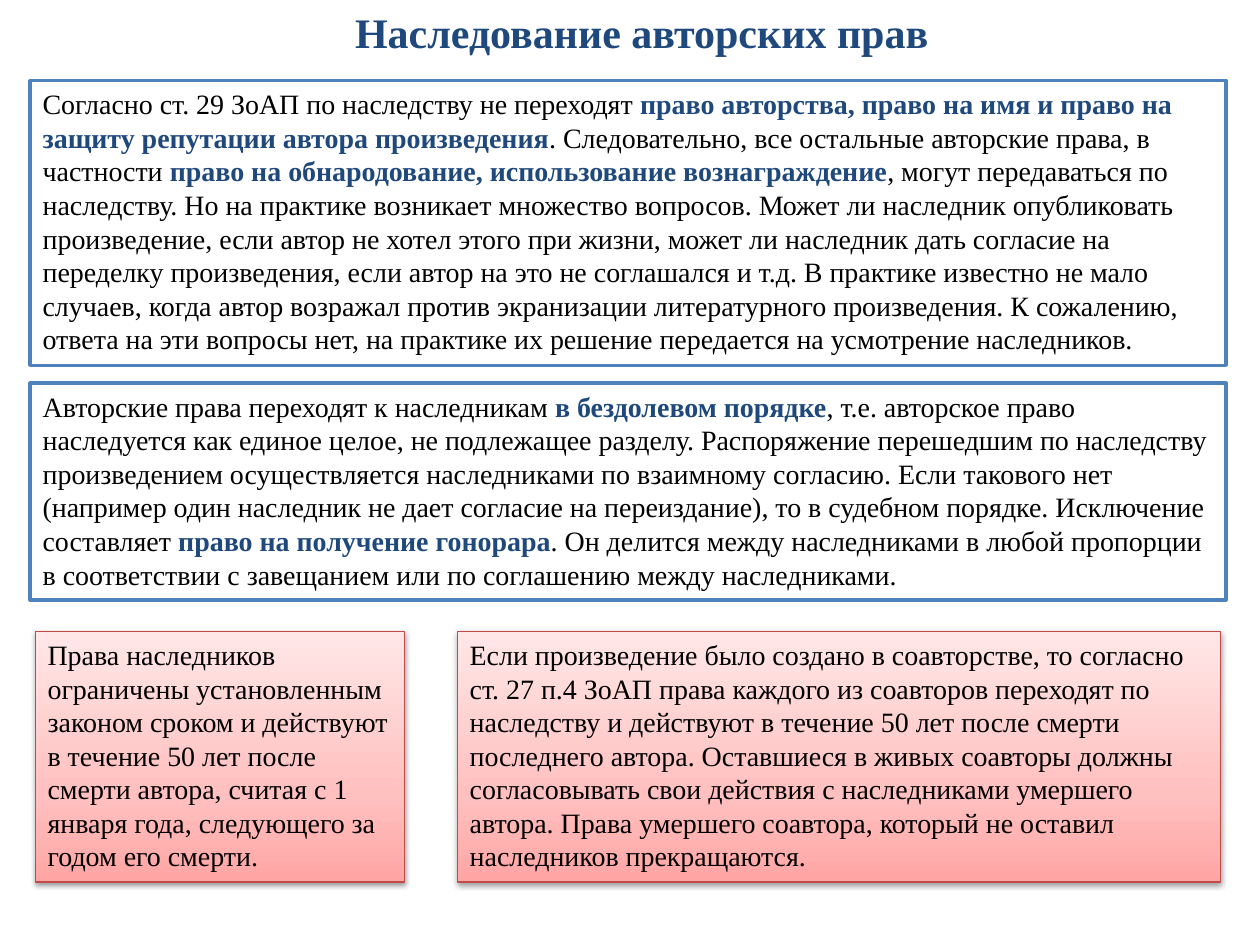
from dataclasses import dataclass

import pptx
import pptx.dml.color
import pptx.enum.shapes
import pptx.enum.text
import pptx.oxml
import pptx.oxml.ns
import pptx.util
from copy import deepcopy
from pptx.util import Inches

FONT = "Times New Roman"
BLACK, NAVY, BLUE, RED, WHITE = "000000", "1F497D", "4F81BD", "BF4C48", "FFFFFF"
PINK_STOPS = [(0, "FFA6A5"), (0.35, "FFC0BF"), (1, "FFE7E7")]


@dataclass
class Run:
    text: str
    key: bool = False


@dataclass
class Panel:
    left: float
    top: float
    width: float
    height: float
    runs: list[Run]
    pink: bool = False


PANELS = [
    Panel(0.24, 0.64, 9.49, 2.26, [
        Run("Согласно ст. 29 ЗоАП по наследству не переходят "),
        Run("право авторства, право на имя и право на защиту репутации автора "
            "произведения", True),
        Run(". Следовательно, все остальные авторские права, в частности "),
        Run("право на обнародование, использование вознаграждение", True),
        Run(", могут передаваться по наследству. Но на практике возникает множество "
            "вопросов. Может ли наследник опубликовать произведение, если автор не хотел "
            "этого при жизни, может ли наследник дать согласие на переделку произведения, "
            "если автор на это не соглашался и т.д. В практике известно не мало случаев, "
            "когда автор возражал против экранизации литературного произведения. "
            "К сожалению, ответа на эти вопросы нет, на практике их решение передается "
            "на усмотрение наследников."),
    ]),
    Panel(0.28, 5.01, 2.93, 1.99, [
        Run("Права наследников ограничены установленным законом сроком и действуют "
            "в течение 50 лет после смерти автора, считая с 1 января года, следующего "
            "за годом его смерти."),
    ], pink=True),
    Panel(0.24, 3.04, 9.49, 1.72, [
        Run("Авторские права переходят к наследникам "),
        Run("в бездолевом порядке", True),
        Run(", т.е. авторское право наследуется как единое целое, не подлежащее разделу. "
            "Распоряжение перешедшим по наследству произведением осуществляется "
            "наследниками по взаимному согласию. Если такового нет (например один "
            "наследник не дает согласие на переиздание), то в судебном порядке. "
            "Исключение составляет "),
        Run("право на получение гонорара", True),
        Run(". Он делится между наследниками в любой пропорции в соответствии "
            "с завещанием или по соглашению между наследниками."),
    ]),
    Panel(3.63, 5.01, 6.06, 1.99, [
        Run("Если произведение было создано в соавторстве, то согласно ст. 27 п.4 ЗоАП "
            "права каждого из соавторов переходят по наследству и действуют в течение "
            "50 лет после смерти последнего автора. Оставшиеся в живых соавторы должны "
            "согласовывать свои действия с наследниками умершего автора. Права умершего "
            "соавтора, который не оставил наследников прекращаются."),
    ], pink=True),
]


def color(value: str) -> pptx.dml.color.RGBColor:
    return pptx.dml.color.RGBColor.from_string(value)


def write(frame, runs: list[Run], size: int, wrap: bool) -> None:
    frame.word_wrap = wrap
    frame.auto_size = pptx.enum.text.MSO_AUTO_SIZE.SHAPE_TO_FIT_TEXT
    frame.vertical_anchor = pptx.enum.text.MSO_ANCHOR.TOP
    paragraph = frame.paragraphs[0]
    paragraph.alignment = pptx.enum.text.PP_ALIGN.LEFT
    for part in runs:
        run = paragraph.add_run()
        run.text = part.text
        run.font.name = FONT
        run.font.size = pptx.util.Pt(size)
        run.font.bold = part.key
        run.font.color.rgb = color(NAVY if part.key else BLACK)


def fill_pink(shape) -> None:
    """Three-stop gradient, darkest at the bottom."""
    shape.fill.gradient()
    shape.fill.gradient_angle = 90
    stop_list = shape.element.spPr.find(".//" + pptx.oxml.ns.qn("a:gsLst"))
    stop_list.append(deepcopy(stop_list[0]))
    for stop, (position, value) in zip(shape.fill.gradient_stops, PINK_STOPS):
        stop.position = position
        stop.color.rgb = color(value)


def add_shadow(shape) -> None:
    effects = shape.element.spPr.find(pptx.oxml.ns.qn("a:effectLst"))
    effects.append(pptx.oxml.parse_xml(
        f'<a:outerShdw {pptx.oxml.ns.nsdecls("a")} blurRad="{pptx.util.Pt(3.1)}" '
        f'dist="{pptx.util.Pt(1.6)}" dir="5400000" rotWithShape="0">'
        f'<a:srgbClr val="{BLACK}"><a:alpha val="38000"/></a:srgbClr></a:outerShdw>'))


def draw_panel(slide, panel: Panel) -> None:
    shape = slide.shapes.add_shape(
        pptx.enum.shapes.MSO_SHAPE.RECTANGLE, Inches(panel.left), Inches(panel.top),
        Inches(panel.width), Inches(panel.height))
    shape.shadow.inherit = False
    shape.line.color.rgb = color(RED if panel.pink else BLUE)
    shape.line.width = pptx.util.Pt(0.75 if panel.pink else 2)
    if panel.pink:
        fill_pink(shape)
        add_shadow(shape)
    else:
        shape.fill.solid()
        shape.fill.fore_color.rgb = color(WHITE)
    write(shape.text_frame, panel.runs, 16, wrap=True)


def main() -> None:
    deck = pptx.Presentation()
    deck.slide_width, deck.slide_height = Inches(10), Inches(7.5)
    slide = deck.slides.add_slide(deck.slide_layouts[6])

    # Heading
    heading = slide.shapes.add_textbox(Inches(2.72), Inches(0), Inches(4.8), Inches(0.5))
    write(heading.text_frame, [Run("Наследование авторских прав", True)], 24, wrap=False)

    # Rules of inheritance
    for panel in PANELS:
        draw_panel(slide, panel)

    deck.save("out.pptx")


if __name__ == "__main__":
    main()
